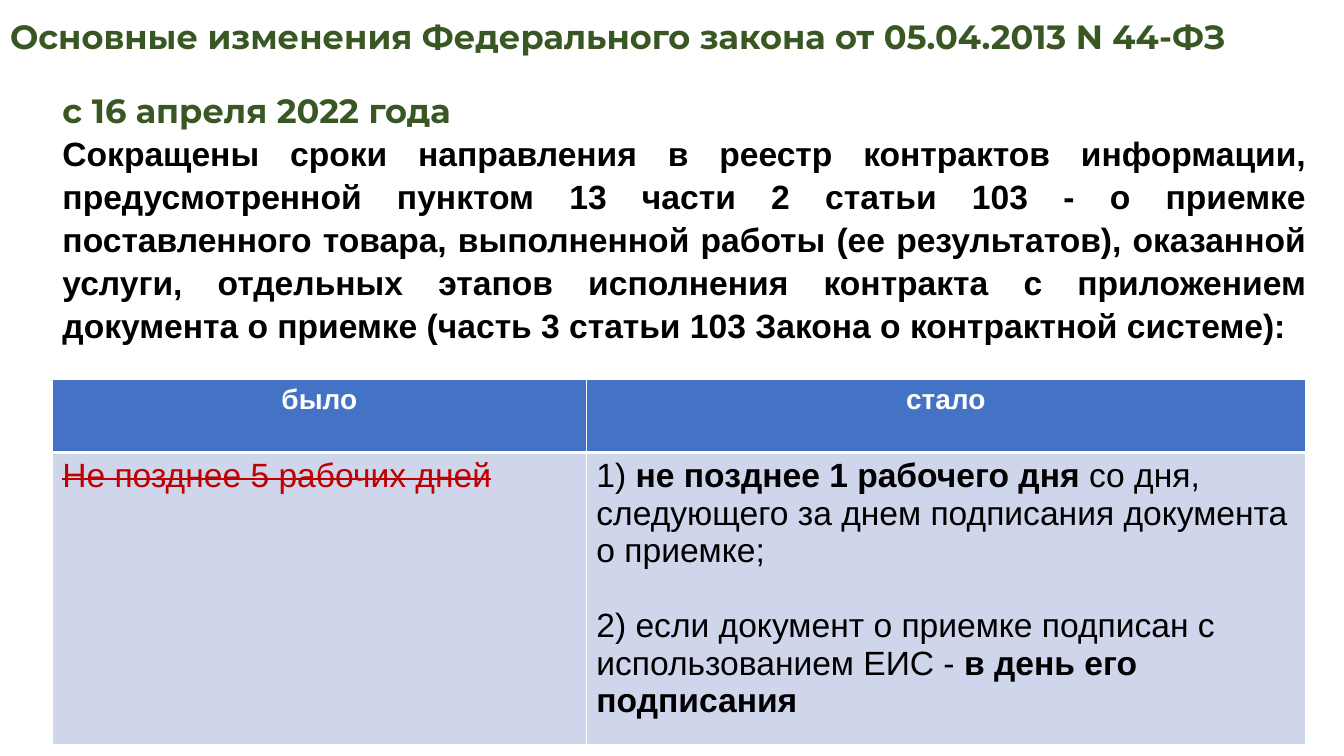
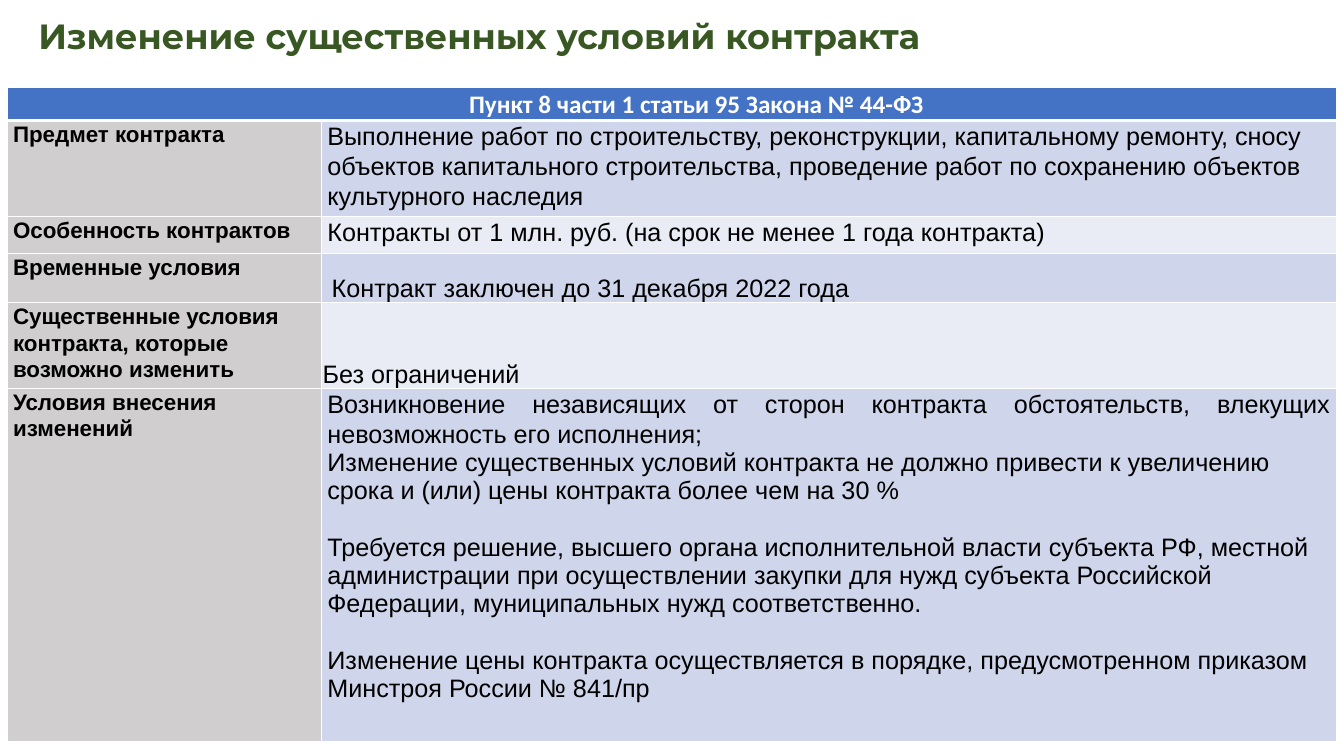
from dataclasses import dataclass

from pptx import Presentation
from pptx import util as u
from pptx.dml.color import RGBColor
from pptx.enum import text
from pptx.oxml import parse_xml
from pptx.oxml.ns import nsdecls

LEFT, CENTER, JUSTIFY = text.PP_ALIGN.LEFT, text.PP_ALIGN.CENTER, text.PP_ALIGN.JUSTIFY
TOP, BOTTOM = text.MSO_ANCHOR.TOP, text.MSO_ANCHOR.BOTTOM


@dataclass(frozen=True)
class Theme:
    green: str = "385723"
    black: str = "000000"
    white: str = "FFFFFF"
    red: str = "C00000"
    blue: str = "4472C4"
    band: str = "CFD5EA"
    pale: str = "E9EBF5"
    grey: str = "D0CECE"
    title_font: str = "Montserrat"
    body_font: str = "Arial"
    header_font: str = "Calibri"
    title: float = 24
    topic: float = 25
    body: float = 24
    header: float = 20
    cell: float = 18
    label: float = 16
    loose: float = 1.07
    rule: float = 1
    heavy_rule: float = 3


T = Theme()


@dataclass(frozen=True)
class Run:
    text: str
    size: float = T.cell
    bold: bool = False
    color: str = T.black
    font: str = T.body_font
    strike: bool = False


@dataclass(frozen=True)
class Para:
    runs: tuple[Run, ...]
    align: text.PP_ALIGN = LEFT
    spacing: float = 1.0
    before: float = 0
    left: float = 0
    first: float = 0


@dataclass(frozen=True)
class Cell:
    paras: tuple[Para, ...]
    fill: str
    margins: tuple[float, float] = (0.25, 0.13)
    anchor: text.MSO_ANCHOR = TOP


@dataclass(frozen=True)
class Box:
    left: float
    top: float
    width: float
    height: float


def write(tf, paras: tuple[Para, ...]) -> None:
    for i, para in enumerate(paras):
        p = tf.paragraphs[0] if i == 0 else tf.add_paragraph()
        pPr = p._p.get_or_add_pPr()
        pPr.set("marL", str(u.Cm(para.left)))
        pPr.set("indent", str(u.Cm(para.first)))
        pPr.append(parse_xml(f"<a:buNone {nsdecls('a')}/>"))
        p.alignment = para.align
        p.line_spacing = para.spacing
        p.space_before = u.Pt(para.before)
        p.space_after = u.Pt(0)
        for run in para.runs:
            r = p.add_run()
            r.text = run.text
            r.font.name, r.font.size, r.font.bold = run.font, u.Pt(run.size), run.bold
            r.font.color.rgb = RGBColor.from_string(run.color)
            if run.strike:
                r._r.get_or_add_rPr().set("strike", "sngStrike")


def fill_placeholder(sp, box: Box, paras: tuple[Para, ...]) -> None:
    sp.left, sp.top = u.Cm(box.left), u.Cm(box.top)
    sp.width, sp.height = u.Cm(box.width), u.Cm(box.height)
    tf = sp.text_frame
    tf.word_wrap = True
    tf.auto_size = text.MSO_AUTO_SIZE.NONE
    tf.vertical_anchor = TOP
    write(tf, paras)


def heading(words: str, size: float) -> Para:
    return Para((Run(words, size, True, T.green, T.title_font),))


def add_borders(cell, row: int) -> None:
    tcPr = cell._tc.get_or_add_tcPr()
    heavy = {(0, "B"), (1, "T")}
    for side in "LRTB":
        width = u.Pt(T.heavy_rule if (row, side) in heavy else T.rule)
        tcPr.append(parse_xml(
            f'<a:ln{side} {nsdecls("a")} w="{width}"><a:solidFill>'
            f'<a:srgbClr val="{T.white}"/></a:solidFill></a:ln{side}>'))


def add_grid(s, left: float, top: float, cols: tuple[float, ...],
             heights: tuple[float, ...], rows: tuple[tuple[Cell, ...], ...]) -> None:
    table = s.shapes.add_table(len(heights), len(cols), u.Cm(left), u.Cm(top),
                               u.Cm(sum(cols)), u.Cm(sum(heights))).table
    for column, width in zip(table.columns, cols):
        column.width = u.Cm(width)
    for i, (height, row) in enumerate(zip(heights, rows)):
        table.rows[i].height = u.Cm(height)
        for j, data in enumerate(row):
            cell = table.cell(i, j)
            add_borders(cell, i)
            cell.fill.solid()
            cell.fill.fore_color.rgb = RGBColor.from_string(data.fill)
            side, edge = data.margins
            cell.margin_left = cell.margin_right = u.Cm(side)
            cell.margin_top = cell.margin_bottom = u.Cm(edge)
            cell.vertical_anchor = data.anchor
            write(cell.text_frame, data.paras)
        if len(row) < len(cols):
            table.cell(i, 0).merge(table.cell(i, len(cols) - 1))


def deadline_header(words: str) -> Cell:
    return Cell((Para((Run(words, T.header, True, T.white),), CENTER),), T.blue)


def label(words: str) -> Cell:
    return Cell((Para((Run(words, T.label, True),), spacing=T.loose),), T.grey, (0.15, 0))


def detail(fill: str, *paras: Para) -> Cell:
    return Cell(paras, fill, (0.15, 0))


def low_detail(fill: str, words: str, left: float = 0) -> Cell:
    return Cell((Para((Run(words),), JUSTIFY, left=left),), fill, (0.03, 0), BOTTOM)


def build_deadlines(prs) -> None:
    s = prs.slides.add_slide(prs.slide_layouts[1])
    fill_placeholder(s.shapes.title, Box(0, 0.28, 33.45, 1.27), (
        heading("Основные изменения Федерального закона от 05.04.2013 N 44-ФЗ", T.title),))
    fill_placeholder(s.placeholders[1], Box(1.32, 2.13, 31.85, 6.4), (
        heading("с 16 апреля 2022 года", T.title),
        Para((Run("Сокращены сроки направления в реестр контрактов информации, "
                  "предусмотренной пунктом 13 части 2 статьи 103 - о приемке "
                  "поставленного товара, выполненной работы (ее результатов), "
                  "оказанной услуги, отдельных этапов исполнения контракта с "
                  "приложением документа о приемке (часть 3 статьи 103 Закона "
                  "о контрактной системе):", T.body, True),), JUSTIFY, T.loose)))
    old = Para((Run("Не позднее 5 рабочих дней", T.body, color=T.red, strike=True),))
    general = Para((
        Run("1) ", T.body),
        Run("не позднее 1 рабочего дня ", T.body, True),
        Run("со дня, следующего за днем подписания документа о приемке;", T.body)))
    electronic = Para((
        Run("2) если документ о приемке подписан с использованием ЕИС - ", T.body),
        Run("в день его подписания", T.body, True)), before=26.8)
    add_grid(s, 1.32, 9.55, (13.46, 18.11), (1.85, 7.37), (
        (deadline_header("было"), deadline_header("стало")),
        (Cell((old,), T.band), Cell((general, electronic), T.band))))


def build_conditions(prs) -> None:
    s = prs.slides.add_slide(prs.slide_layouts[5])
    fill_placeholder(s.shapes.title, Box(0.71, 0.23, 23.85, 1.32), (
        heading("Изменение существенных условий контракта", T.topic),))
    clause = Run("Пункт 8 части 1 статьи 95 Закона № 44-ФЗ", T.cell, True,
                 T.white, T.header_font)
    gap = 20.1
    add_grid(s, 0.18, 2.21, (7.92, 25.58), (0.81, 2.41, 0.94, 1.24, 2.16, 8.89), (
        (detail(T.blue, Para((clause,), CENTER, T.loose, first=1.24)),),
        (label("Предмет контракта"), detail(T.band, Para((Run(
            "Выполнение работ по строительству, реконструкции, капитальному ремонту, "
            "сносу объектов капитального строительства, проведение работ по "
            "сохранению объектов культурного наследия"),), spacing=T.loose))),
        (label("Особенность контрактов"), detail(T.pale, Para((Run(
            "Контракты от 1 млн. руб. (на срок не менее 1 года контракта)"),),
            spacing=T.loose))),
        (label("Временные условия"),
         low_detail(T.band, "Контракт заключен до 31 декабря 2022 года", 0.23)),
        (label("Существенные условия контракта, которые возможно изменить"),
         low_detail(T.pale, "Без ограничений")),
        (label("Условия внесения изменений"), detail(
            T.band,
            Para((Run("Возникновение независящих от сторон контракта обстоятельств, "
                      "влекущих невозможность его исполнения;"),), JUSTIFY, T.loose),
            Para((Run("Изменение существенных условий контракта не должно привести "
                      "к увеличению срока и (или) цены контракта более чем на 30 %"),)),
            Para((Run("Требуется решение, высшего органа исполнительной власти "
                      "субъекта РФ, местной администрации при осуществлении закупки "
                      "для нужд субъекта Российской Федерации, муниципальных нужд "
                      "соответственно."),), before=gap),
            Para((Run("Изменение цены контракта осуществляется в порядке, "
                      "предусмотренном приказом Минстроя России № 841/пр"),),
                 before=gap)))))


def main() -> None:
    prs = Presentation()
    prs.slide_width, prs.slide_height = u.Cm(33.87), u.Cm(19.05)
    build_deadlines(prs)
    build_conditions(prs)
    prs.save("out.pptx")


if __name__ == "__main__":
    main()
